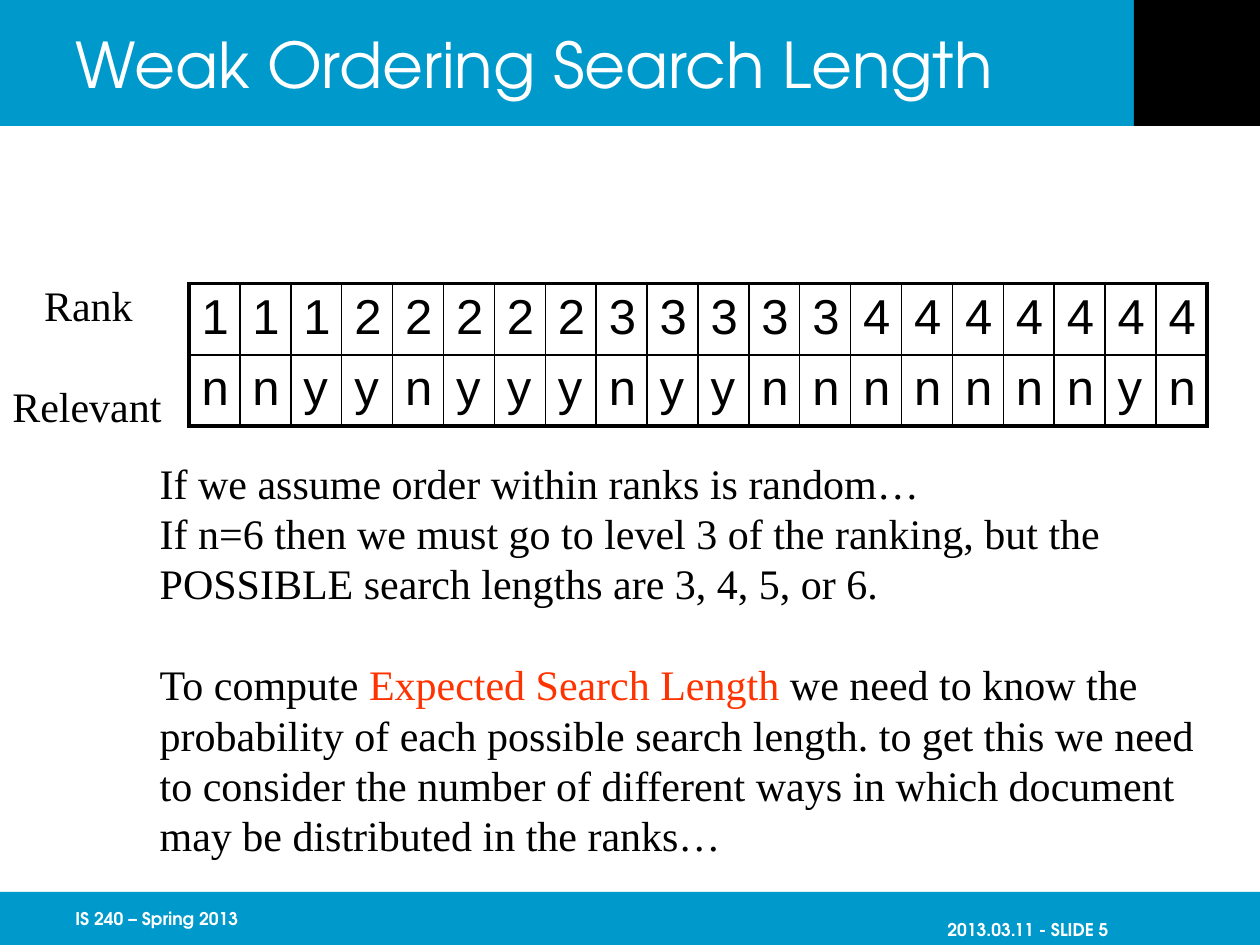
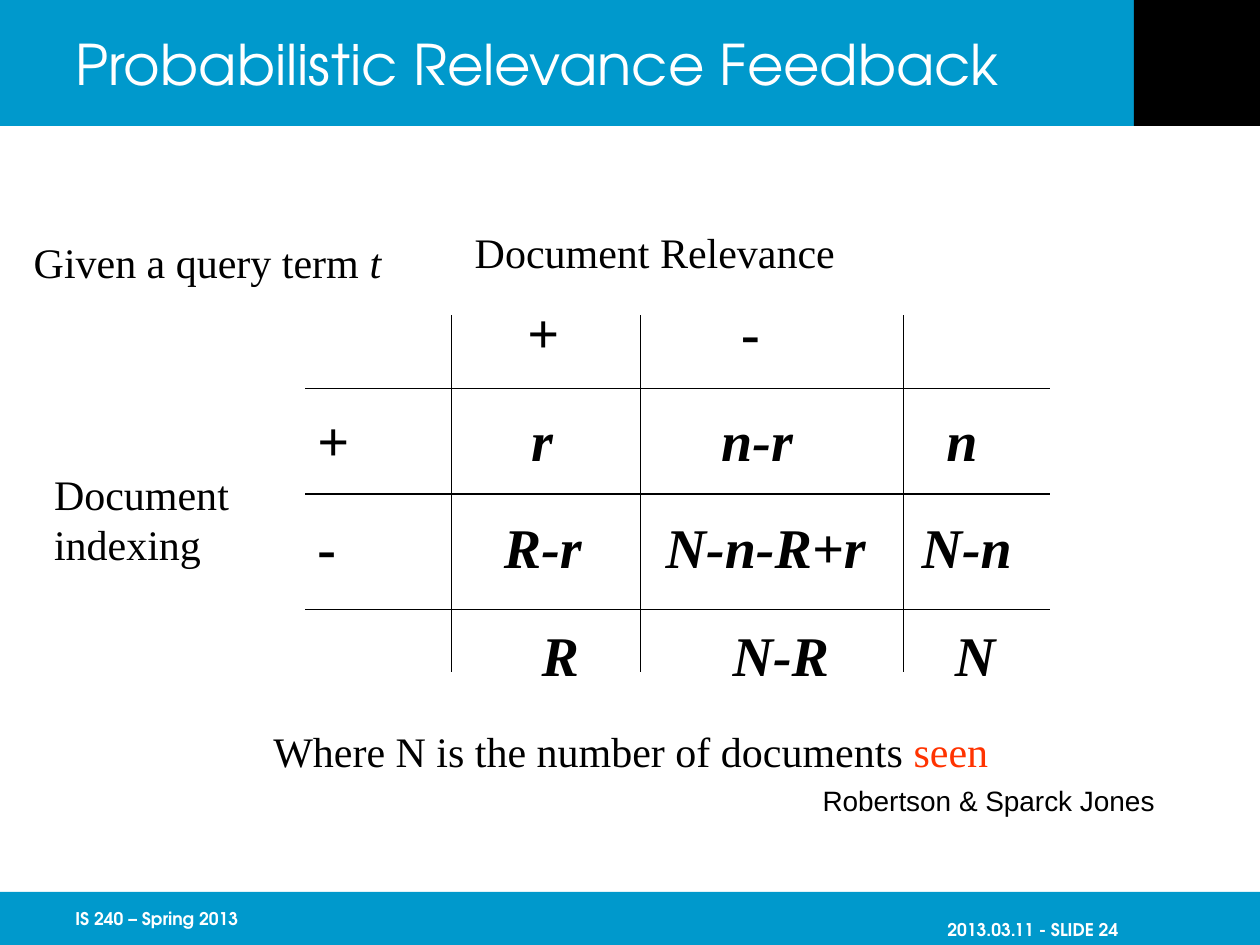
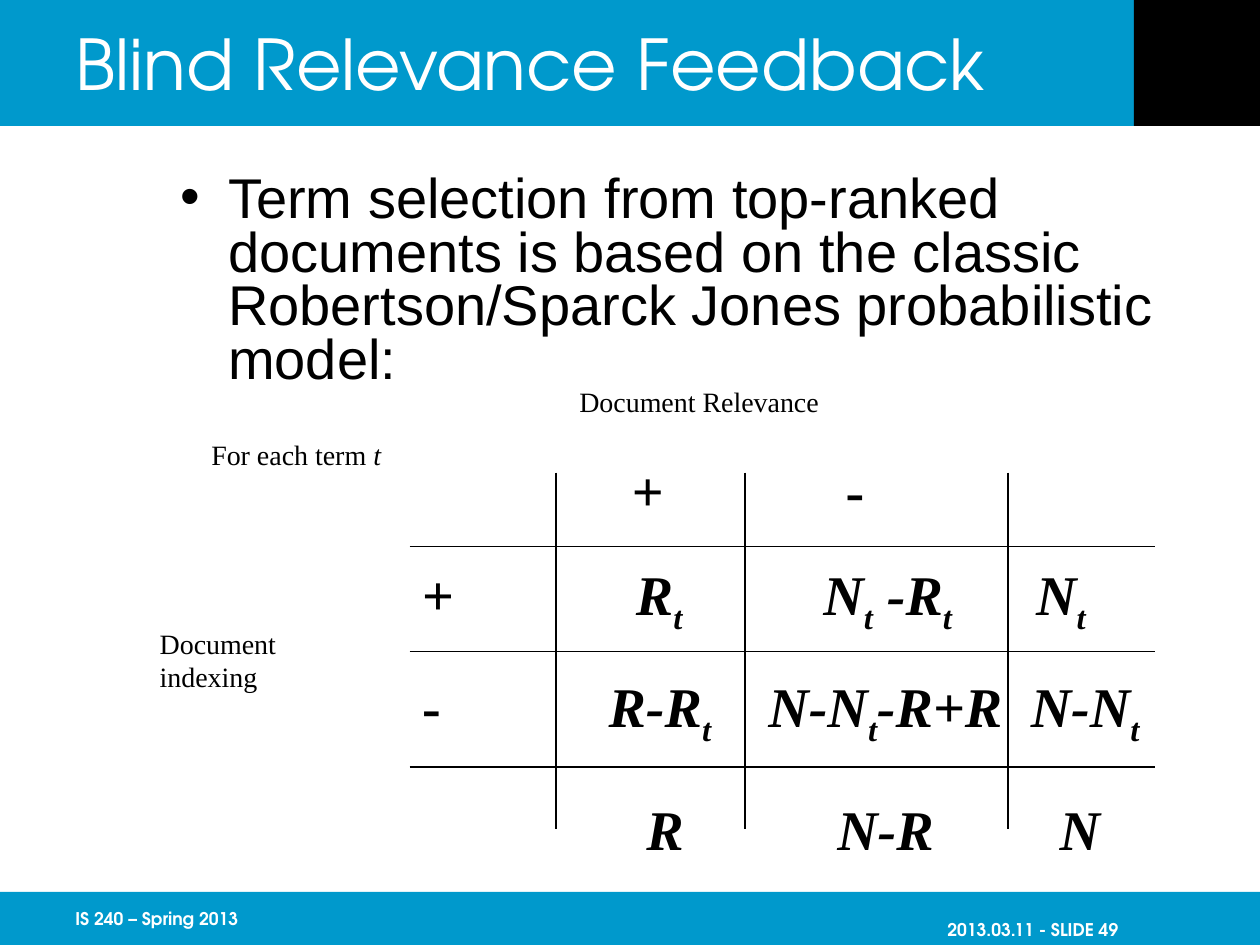
from lxml.etree import SubElement
from pptx import Presentation
from pptx.dml.color import RGBColor
from pptx.enum.shapes import MSO_CONNECTOR, MSO_SHAPE
from pptx.enum.text import MSO_ANCHOR, MSO_AUTO_SIZE, PP_ALIGN
from pptx.oxml import parse_xml
from pptx.oxml.ns import nsdecls, qn
from pptx.util import Cm, Pt

BLUE, BLACK, WHITE, RED = "0099CC", "000000", "FFFFFF", "FF3300"
HEAD, SERIF, SANS = "TeX Gyre Adventor", "Times New Roman", "Arial"
WIDE, HIGH, BAND, FOOT = 25.4, 19.05, 2.54, 1.07

COURSE = "IS 240 – Spring 2013"
DATE = "2013.03.11 - SLIDE "
RANKS = ["11122222333334444444", "nnyynyyynyynnnnnnnyn"]

# A paragraph is a list of runs; a run is text plus style letters:
# b bold, i italic, s subscript, r red.
RANDOM = [
    [("If we assume order within ranks is random…", "")],
    [("If n=6 then we must go to level 3 of the ranking, but the", "")],
    [("POSSIBLE search lengths are 3, 4, 5, or 6.", "")],
    [("To compute ", ""), ("Expected Search Length", "r"),
     (" we need to know the", "")],
    [("probability of each possible search length. to get this we need", "")],
    [("to consider the number of different ways in which document", "")],
    [("may be distributed in the ranks…", "")],
]
INDEXING = [[("Document", "")], [("indexing", "")]]
RELEVANCE = [[("Document Relevance", "")]]
GIVEN = [[("Given a query term ", ""), ("t", "i")]]
EACH = [[("For each term ", ""), ("t", "i")]]
SEEN = [[("Where N is the number of documents ", ""), ("seen", "r")]]
SOURCE = [[("Robertson & Sparck Jones", "")]]
MODEL = [[("Term selection from top-ranked documents is based on the classic "
           "Robertson/Sparck Jones probabilistic model:", "")]]

# Matrix rows: label, then (tab stop in cm, formula); "_" lowers one letter.
TOP = ("", [(4.23, "+"), (8.54, "-")])
SUM = ("", [(4.52, "R"), (8.37, "N-R"), (12.85, "N")])
TERM = [
    TOP,
    ("+", [(4.31, "r"), (8.14, "n-r"), (12.68, "n")]),
    ("-", [(3.76, "R-r"), (7.02, "N-n-R+r"), (12.18, "N-n")]),
    SUM,
]
BLIND = [
    TOP,
    ("+", [(4.31, "R_t"), (8.09, "N_t -R_t"), (12.38, "N_t")]),
    ("-", [(3.76, "R-R_t"), (6.98, "N-N_t-R+R"), (12.27, "N-N_t")]),
    SUM,
]
ROWS, COLS = (1.68, 3.81, 6.13), (2.95, 6.76, 12.06)


def rgb(code):
    return RGBColor.from_string(code)


def add_run(para, text, size, face, style="", color=BLACK):
    run = para.add_run()
    run.text = text
    font = run.font
    font.size, font.name = Pt(size), face
    font.bold, font.italic = "b" in style, "i" in style
    font.color.rgb = rgb(RED if "r" in style else color)
    if "s" in style:
        run.font._element.set("baseline", "-25000")


def add_box(slide, x, y, w, h, wrap=False, fit=True):
    box = slide.shapes.add_textbox(Cm(x), Cm(y), Cm(w), Cm(h))
    frame = box.text_frame
    frame.word_wrap = wrap
    frame.auto_size = (MSO_AUTO_SIZE.SHAPE_TO_FIT_TEXT if fit
                       else MSO_AUTO_SIZE.NONE)
    return box


def next_para(frame, index):
    return frame.paragraphs[0] if index == 0 else frame.add_paragraph()


def add_text(slide, place, paras, size, face=SERIF, gaps=(), lead=1.2, **kind):
    """Add a box; gaps lists the paragraphs that follow a free line."""
    frame = add_box(slide, *place, **kind).text_frame
    for i, runs in enumerate(paras):
        para = next_para(frame, i)
        para.line_spacing = Pt(size * lead)
        if i in gaps:
            para.space_before = Pt(size * lead)
        for text, style in runs:
            add_run(para, text, size, face, style)
    return frame


def add_foot(slide, x, text, top):
    box = add_box(slide, x, HIGH - FOOT, 5.28, FOOT, fit=False)
    frame = box.text_frame
    frame.vertical_anchor = MSO_ANCHOR.MIDDLE
    frame.margin_right, frame.margin_top = 0, Cm(top)
    add_run(frame.paragraphs[0], text, 10, HEAD, "b", WHITE)
    return box


def add_band(slide, x, y, w, h, color):
    band = slide.shapes.add_shape(MSO_SHAPE.RECTANGLE,
                                  Cm(x), Cm(y), Cm(w), Cm(h))
    band.shadow.inherit = False
    band.fill.solid()
    band.fill.fore_color.rgb = rgb(color)
    band.line.fill.background()
    return band


def dress(slide, layout):
    """Move the bands and the course footer to the shared layout."""
    parts = [
        add_band(slide, 0, 0, WIDE, BAND, BLUE),
        add_band(slide, 0, HIGH - FOOT, WIDE, FOOT, BLUE),
        add_band(slide, WIDE - BAND, 0, BAND, BAND, BLACK),
        add_foot(slide, 1.27, COURSE, 0.13),
    ]
    for part in parts:
        layout.shapes.element.append(part.element)


def add_slide(deck, title, size, number):
    layout = deck.slide_layouts[5]
    slide = deck.slides.add_slide(layout)
    if len(deck.slides) == 1:
        dress(slide, layout)
    head = slide.shapes.title
    head.left, head.top = Cm(1.27), Cm(0)
    head.width, head.height = Cm(21.59), Cm(BAND)
    frame = head.text_frame
    frame.auto_size = MSO_AUTO_SIZE.NONE
    frame.vertical_anchor = MSO_ANCHOR.MIDDLE
    para = frame.paragraphs[0]
    para.alignment = PP_ALIGN.LEFT
    add_run(para, title, size, HEAD, color=WHITE)
    add_foot(slide, 18.85, f"{DATE}{number}", 0.56)
    return slide


def set_edges(cell, widths):
    props = cell._tc.get_or_add_tcPr()
    for i, (side, width) in enumerate(zip("LRTB", widths)):
        props.insert(i, parse_xml(
            f'<a:ln{side} {nsdecls("a")} w="{Pt(width)}"><a:solidFill>'
            f'<a:srgbClr val="{BLACK}"/></a:solidFill></a:ln{side}>'))


def add_ranks(slide, x, y, w, h):
    rows, cols = len(RANKS), len(RANKS[0])
    table = slide.shapes.add_table(rows, cols, Cm(x), Cm(y),
                                   Cm(w), Cm(h)).table
    table.first_row = table.horz_banding = False
    for r, line in enumerate(RANKS):
        for c, mark in enumerate(line):
            cell = table.cell(r, c)
            cell.fill.background()
            add_run(cell.text_frame.paragraphs[0], mark, 28, SANS)
            outer = (c == 0, c == cols - 1, r == 0, r == rows - 1)
            set_edges(cell, [2.25 if edge else 1 for edge in outer])


def add_line(slide, x1, y1, x2, y2):
    line = slide.shapes.add_connector(MSO_CONNECTOR.STRAIGHT,
                                      Cm(x1), Cm(y1), Cm(x2), Cm(y2))
    line.line.color.rgb = rgb(BLACK)
    line.line.width = Pt(0.75)
    SubElement(line.element.spPr, qn("a:effectLst"))


def add_matrix(slide, x, y, rows, pitch):
    """Draw the contingency grid; pitch is the row distance in points."""
    size, lead = 32, 30.7
    frame = add_box(slide, x, y, 15.1, 7.85, wrap=True).text_frame
    for i, (label, cells) in enumerate(rows):
        para = next_para(frame, i)
        tabs = SubElement(para._p.get_or_add_pPr(), qn("a:tabLst"))
        for stop, _ in cells:
            SubElement(tabs, qn("a:tab"), pos=str(int(Cm(stop))), algn="l")
        para.line_spacing = Pt(lead)
        if i:
            para.space_before = Pt(pitch - lead)
        if label:
            add_run(para, label, size, SERIF, "b")
        style = "bi" if i else "b"
        for _, formula in cells:
            first, *rest = formula.split("_")
            add_run(para, "\t" + first, size, SERIF, style)
            for part in rest:
                add_run(para, part[0], size, SERIF, style + "s")
                if part[1:]:
                    add_run(para, part[1:], size, SERIF, style)
    for dy in ROWS:
        add_line(slide, x, y + dy, x + 15.02, y + dy)
    for dx in COLS:
        add_line(slide, x + dx, y + 0.2, x + dx, y + 7.39)


def add_bullet(para, mark, indent):
    props = para._p.get_or_add_pPr()
    props.set("marL", str(int(Cm(indent))))
    props.set("indent", str(-int(Cm(indent))))
    SubElement(props, qn("a:buFont"), typeface=SANS)
    SubElement(props, qn("a:buChar"), char=mark)


def weak_order(deck):
    slide = add_slide(deck, "Weak Ordering Search Length", 36, 5)
    add_ranks(slide, 3.81, 5.72, 20.52, 2.87)
    names = add_text(slide, (0, 5.51, 3.53, 3.3),
                     [[("Rank", "")], [("Relevant", "")]], 24, gaps=[1])
    names.paragraphs[0]._p.get_or_add_pPr().set("marL", str(int(Cm(0.64))))
    add_text(slide, (2.97, 9.09, 21.36, 8.38), RANDOM, 24, gaps=[3])


def term_odds(deck):
    slide = add_slide(deck, "Probabilistic Relevance Feedback", 32, 24)
    add_text(slide, (9.32, 4.45, 7.77, 1.27), RELEVANCE, 24)
    add_text(slide, (0.84, 9.32, 4.04, 2.29), INDEXING, 24)
    add_text(slide, (0.43, 4.65, 7.72, 1.27), GIVEN, 24)
    add_matrix(slide, 6.15, 6.15, TERM, 61.4)
    add_text(slide, (5.26, 14.5, 14.94, 1.27), SEEN, 24)
    cite = add_text(slide, (16.31, 15.67, 7.24, 0.94), SOURCE, 16, SANS)
    cite.paragraphs[0].alignment = PP_ALIGN.CENTER


def blind_odds(deck):
    slide = add_slide(deck, "Blind Relevance Feedback", 40, 49)
    body = add_text(slide, (3.38, 3.42, 21.59, 12.5), MODEL, 32, SANS,
                    lead=0.96, wrap=True, fit=False)
    add_bullet(body.paragraphs[0], "•", 0.97)
    add_text(slide, (11.43, 7.62, 7.77, 1.27), RELEVANCE, 16)
    add_text(slide, (2.97, 12.5, 4.04, 2.29), INDEXING, 16)
    add_matrix(slide, 8.26, 9.33, BLIND, 64.5)
    add_text(slide, (4.01, 8.69, 5.66, 1.27), EACH, 16)


def main():
    deck = Presentation()
    deck.slide_width, deck.slide_height = Cm(WIDE), Cm(HIGH)
    weak_order(deck)
    term_odds(deck)
    blind_odds(deck)
    deck.save("out.pptx")


if __name__ == "__main__":
    main()
